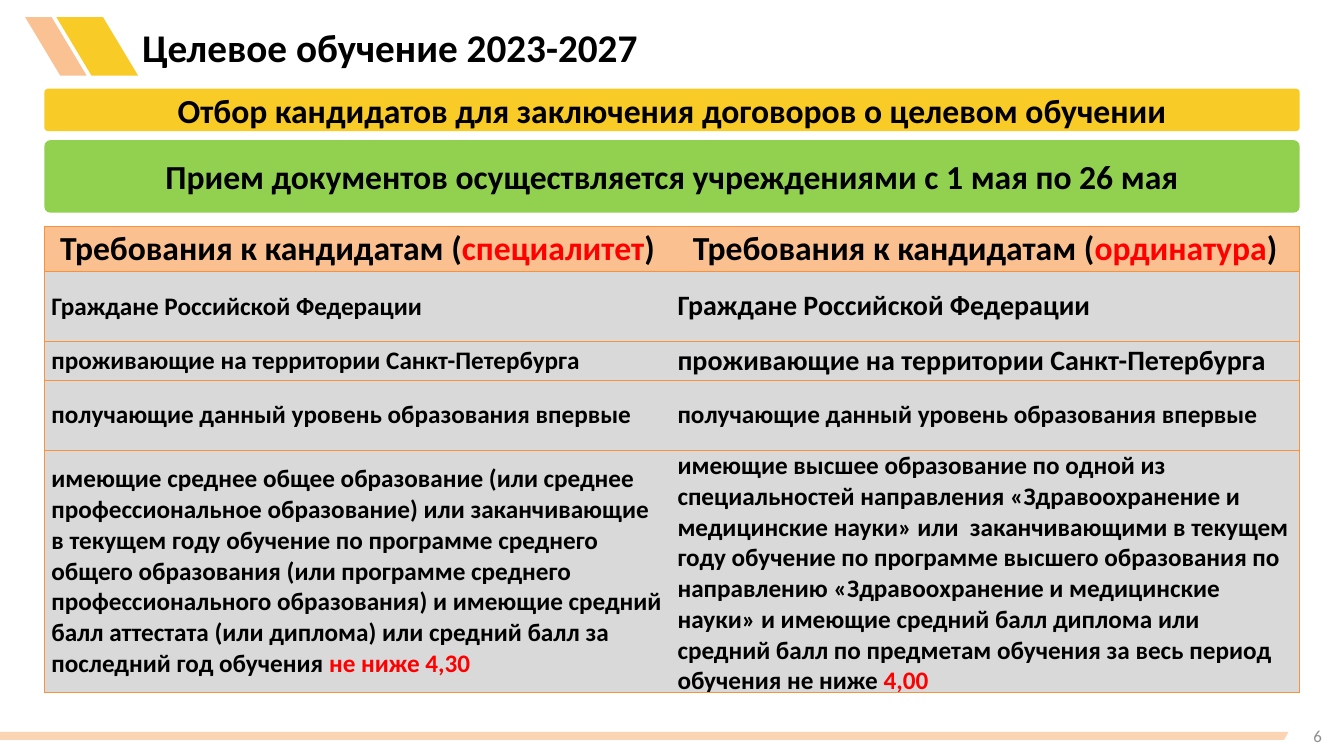
from lxml import etree
from pptx import Presentation
from pptx.dml.color import RGBColor
from pptx.enum.shapes import MSO_SHAPE
from pptx.enum.text import MSO_ANCHOR, MSO_AUTO_SIZE, PP_ALIGN
from pptx.oxml.ns import qn
from pptx.util import Pt

PARALLELOGRAM, ROUNDED = MSO_SHAPE.PARALLELOGRAM, MSO_SHAPE.ROUNDED_RECTANGLE
MIDDLE = MSO_ANCHOR.MIDDLE
LEFT, CENTER, RIGHT = PP_ALIGN.LEFT, PP_ALIGN.CENTER, PP_ALIGN.RIGHT
PX = 9144
TITLE_ONLY = 5
NO_STYLE = "{2D5ABB26-0587-4C30-8999-92F81FD0307C}"
THEME = {
    "font": "Calibri", "black": "000000", "red": "FF0000", "grey": "8C8C8C",
    "yellow": "F8CB26", "orange": "F8A764", "green": "92D050",
    "head": "FAC090", "body": "D9D9D9", "border": "F69240",
    "title": 28, "heading": 24, "large": 20, "text": 18, "number": 12,
}


def write(frame, parts, size, align=LEFT, bold=True):
    frame.word_wrap = True
    frame.vertical_anchor = MIDDLE
    paragraph = frame.paragraphs[0]
    paragraph.alignment = align
    for text, color in parts:
        run = paragraph.add_run()
        run.text = text
        formats = {"name": THEME["font"], "size": Pt(THEME[size]), "bold": bold}
        for key, value in formats.items():
            setattr(run.font, key, value)
        run.font.color.rgb = RGBColor.from_string(THEME[color])


def add_block(kind, box, color, adjust):
    block = slide.shapes.add_shape(kind, *[n * PX for n in box])
    block.shadow.inherit = False
    block.adjustments[0] = adjust
    block.fill.solid()
    block.fill.fore_color.rgb = RGBColor.from_string(THEME[color])
    block.line.fill.background()
    return block


prs = Presentation()
prs.slide_width, prs.slide_height = 1333 * PX, 750 * PX
slide = prs.slides.add_slide(prs.slide_layouts[TITLE_ONLY])

stripes = [
    ((-10, 726, 1288, 8), "orange", 0.544, 48, False),
    ((56, 17, 81, 58), "yellow", 0.6, 100, True),
    ((25, 17, 61, 58), "orange", 0.6, 70, True),
]
for box, color, adjust, opacity, flipped in stripes:
    stripe = add_block(PARALLELOGRAM, box, color, adjust)
    if flipped:
        stripe.element.spPr.find(qn("a:xfrm")).set("flipH", "1")
    if opacity < 100:
        rgb = stripe.element.spPr.find(qn("a:solidFill")).find(qn("a:srgbClr"))
        etree.SubElement(rgb, qn("a:alpha")).set("val", str(opacity * 1000))

title = slide.shapes.title
for side, n in {"left": 131, "top": 20, "width": 876, "height": 53}.items():
    setattr(title, side, n * PX)
write(title.text_frame, [("Целевое обучение 2023-2027", "black")], "title")
title.text_frame.auto_size = MSO_AUTO_SIZE.NONE

page_number = slide.shapes.add_textbox(*[n * PX for n in (1010, 710, 311, 40)])
write(page_number.text_frame, [("6", "grey")], "number", RIGHT, False)

banners = [
    (88, 42, "yellow", "Отбор кандидатов для заключения договоров о целевом обучении"),
    (139, 72, "green", "Прием документов осуществляется учреждениями с 1 мая по 26 мая"),
]
for top, height, color, text in banners:
    banner = add_block(ROUNDED, (44, top, 1245, height), color, 0.083)
    write(banner.text_frame, [(text, "black")], "heading", CENTER)

citizens = [("Граждане Российской Федерации", "black")]
residents = [("проживающие на территории Санкт-Петербурга", "black")]
first_time = [("получающие данный уровень образования впервые", "black")]
specialist_education = [
    ("имеющие среднее общее образование (или среднее профессиональное образование) "
     "или заканчивающие в текущем году обучение по программе среднего общего "
     "образования (или программе среднего профессионального образования) и имеющие "
     "средний балл аттестата (или диплома) или средний балл за последний год "
     "обучения ", "black"),
    ("не ниже 4,30", "red"),
]
residency_education = [
    ("имеющие высшее образование по одной из специальностей направления "
     "«Здравоохранение и медицинские науки» или  заканчивающими в текущем году "
     "обучение по программе высшего образования по направлению «Здравоохранение и "
     "медицинские науки» и имеющие средний балл диплома или средний балл по "
     "предметам обучения за весь период обучения не ниже ", "black"),
    ("4,00", "red"),
]
headings = [
    [("Требования к кандидатам (", "black"), (level, "red"), (")", "black")]
    for level in ("специалитет", "ординатура")
]
requirements = [
    (44, headings, ("heading", "heading")),
    (70, (citizens, citizens), ("text", "large")),
    (38, (residents, residents), ("text", "large")),
    (70, (first_time, first_time), ("text", "text")),
    (240, (specialist_education, residency_education), ("text", "text")),
]
column_widths = (621, 624)
table_height = sum(height for height, _, _ in requirements)
table = slide.shapes.add_table(
    len(requirements), len(column_widths),
    *[n * PX for n in (44, 225, sum(column_widths), table_height)]).table
table.first_row = table.horz_banding = False
table._tbl.tblPr.find(qn("a:tableStyleId")).text = NO_STYLE
for column, width in zip(table.columns, column_widths):
    column.width = width * PX

for r, (height, texts, sizes) in enumerate(requirements):
    table.rows[r].height = height * PX
    for c, (parts, size) in enumerate(zip(texts, sizes)):
        cell = table.cell(r, c)
        margins = {"margin_left": 7, "margin_right": 7, "margin_top": 0, "margin_bottom": 0}
        for margin, n in margins.items():
            setattr(cell, margin, n * PX)
        write(cell.text_frame, parts, size, CENTER if r == 0 else LEFT)
        cell.vertical_anchor = MIDDLE
        properties = cell._tc.get_or_add_tcPr()
        for edge in ("lnL" if c == 0 else "lnR", "lnT", "lnB"):
            border = etree.SubElement(properties, qn(f"a:{edge}"), w=str(Pt(0.75)))
            solid = etree.SubElement(border, qn("a:solidFill"))
            etree.SubElement(solid, qn("a:srgbClr"), val=THEME["border"])
        cell.fill.solid()
        cell.fill.fore_color.rgb = RGBColor.from_string(THEME["head" if r == 0 else "body"])

prs.save("out.pptx")
